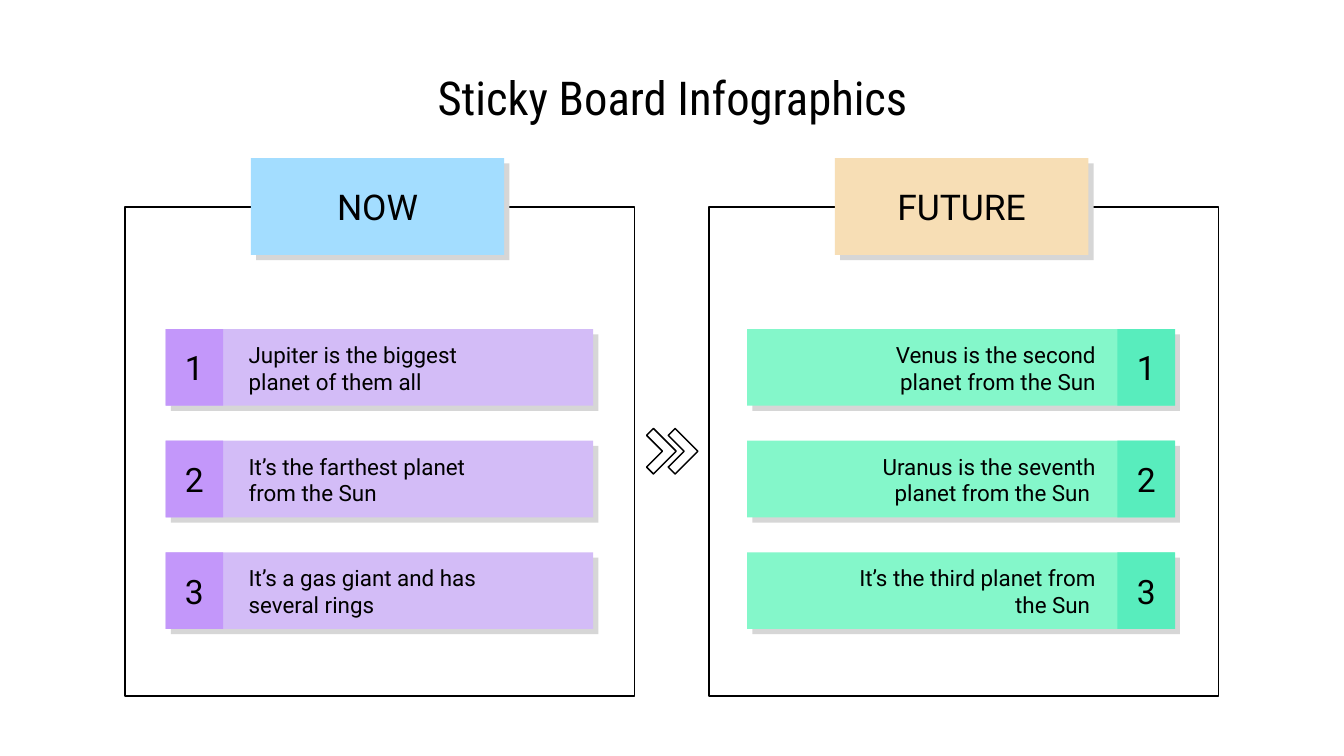
"""Build a slide that compares two boards of notes, now and future."""
from dataclasses import dataclass

from pptx import Presentation
from pptx.dml.color import RGBColor
from pptx.enum.shapes import MSO_SHAPE
from pptx.enum.text import MSO_ANCHOR, PP_ALIGN
from pptx.util import Cm, Pt


@dataclass(frozen=True)
class Theme:
    ink: str = "000000"
    shadow: str = "D6D6D6"
    blue: str = "A3DDFF"
    sand: str = "F7DEB5"
    lilac: str = "D3BCF7"
    purple: str = "C397FA"
    mint: str = "84F7CA"
    green: str = "58EDBD"
    body_font: str = "Roboto"
    title_font: str = "Roboto Condensed"
    title_size: float = 25
    header_size: float = 19
    number_size: float = 18
    note_size: float = 12
    outline: float = 0.81


theme = Theme()


def paint(shape, fill=None):
    shape.shadow.inherit = False
    if fill:
        shape.fill.solid()
        shape.fill.fore_color.rgb = RGBColor.from_string(fill)
        shape.line.fill.background()
    else:
        shape.fill.background()
        shape.line.color.rgb = RGBColor.from_string(theme.ink)
        shape.line.width = Pt(theme.outline)
    return shape


def write(shape, text, size, alignment=PP_ALIGN.CENTER, font_name=theme.body_font):
    frame = shape.text_frame
    paragraph = frame.paragraphs[0]
    run = paragraph.add_run()
    run.text = text
    run.font.color.rgb = RGBColor.from_string(theme.ink)
    frame_format = {"word_wrap": True, "vertical_anchor": MSO_ANCHOR.MIDDLE}
    for side in ("left", "top", "right", "bottom"):
        frame_format[f"margin_{side}"] = Cm(0.25)
    formats = (
        (frame, frame_format),
        (paragraph, {"alignment": alignment}),
        (run.font, {"name": font_name, "size": Pt(size)}),
    )
    for target, values in formats:
        for name, value in values.items():
            setattr(target, name, value)


presentation = Presentation()
presentation.slide_width, presentation.slide_height = Cm(25.4), Cm(14.29)
slide = presentation.slides.add_slide(presentation.slide_layouts[6])
shapes = slide.shapes

title = shapes.add_textbox(Cm(1.98), Cm(1.27), Cm(21.46), Cm(1.12))
write(title, "Sticky Board Infographics", theme.title_size, font_name=theme.title_font)

boards = [
    {
        "header": "NOW", "header_fill": theme.blue,
        "bar_fill": theme.lilac, "number_fill": theme.purple,
        "left": 2.36, "bar_left": 3.13, "number_left": 3.13, "note_left": 4.45,
        "alignment": PP_ALIGN.LEFT,
        "notes": [
            "Jupiter is the biggest planet of them all",
            "It’s the farthest planet from the Sun",
            "It’s a gas giant and has several rings",
        ],
    },
    {
        "header": "FUTURE", "header_fill": theme.sand,
        "bar_fill": theme.mint, "number_fill": theme.green,
        "left": 13.4, "bar_left": 14.12, "number_left": 21.12, "note_left": 15.86,
        "alignment": PP_ALIGN.RIGHT,
        "notes": [
            "Venus is the second planet from the Sun",
            "Uranus is the seventh planet from the Sun ",
            "It’s the third planet from the Sun ",
        ],
    },
]
shadow_offset = 0.1
header_top, header_width, header_height = 2.99, 4.79, 1.83
bar_top, bar_pitch, bar_width, bar_height = 6.22, 2.11, 8.08, 1.45

for board in boards:
    paint(shapes.add_shape(
        MSO_SHAPE.RECTANGLE, Cm(board["left"]), Cm(3.91), Cm(9.63), Cm(9.25)))

    header_left = board["left"] + 2.38
    for offset, fill in ((shadow_offset, theme.shadow), (0, board["header_fill"])):
        header = paint(shapes.add_shape(
            MSO_SHAPE.RECTANGLE, Cm(header_left + offset), Cm(header_top + offset),
            Cm(header_width), Cm(header_height)), fill)
    write(header, board["header"], theme.header_size)

    for index, note in enumerate(board["notes"]):
        top = bar_top + index * bar_pitch
        for left, offset, width, fill in (
            (board["bar_left"], shadow_offset, bar_width, theme.shadow),
            (board["bar_left"], 0, bar_width, board["bar_fill"]),
            (board["number_left"], 0, 1.09, board["number_fill"]),
        ):
            number = paint(shapes.add_shape(
                MSO_SHAPE.RECTANGLE, Cm(left + offset), Cm(top + offset),
                Cm(width), Cm(bar_height)), fill)
        write(number, str(index + 1), theme.number_size)
        note_box = shapes.add_textbox(
            Cm(board["note_left"]), Cm(top + 0.24), Cm(5.1), Cm(0.99))
        write(note_box, note, theme.note_size, board["alignment"])

chevron_top = 8.1
chevron_points = [(0.13, 0), (0, 0.13), (0.3, 0.43), (0, 0.73), (0.13, 0.86), (0.56, 0.43)]
for chevron_left in (12.22, 12.63):
    corners = [(Cm(chevron_left + x), Cm(chevron_top + y)) for x, y in chevron_points]
    builder = shapes.build_freeform(*corners[0])
    builder.add_line_segments(corners[1:], close=True)
    paint(builder.convert_to_shape())

presentation.save("out.pptx")
